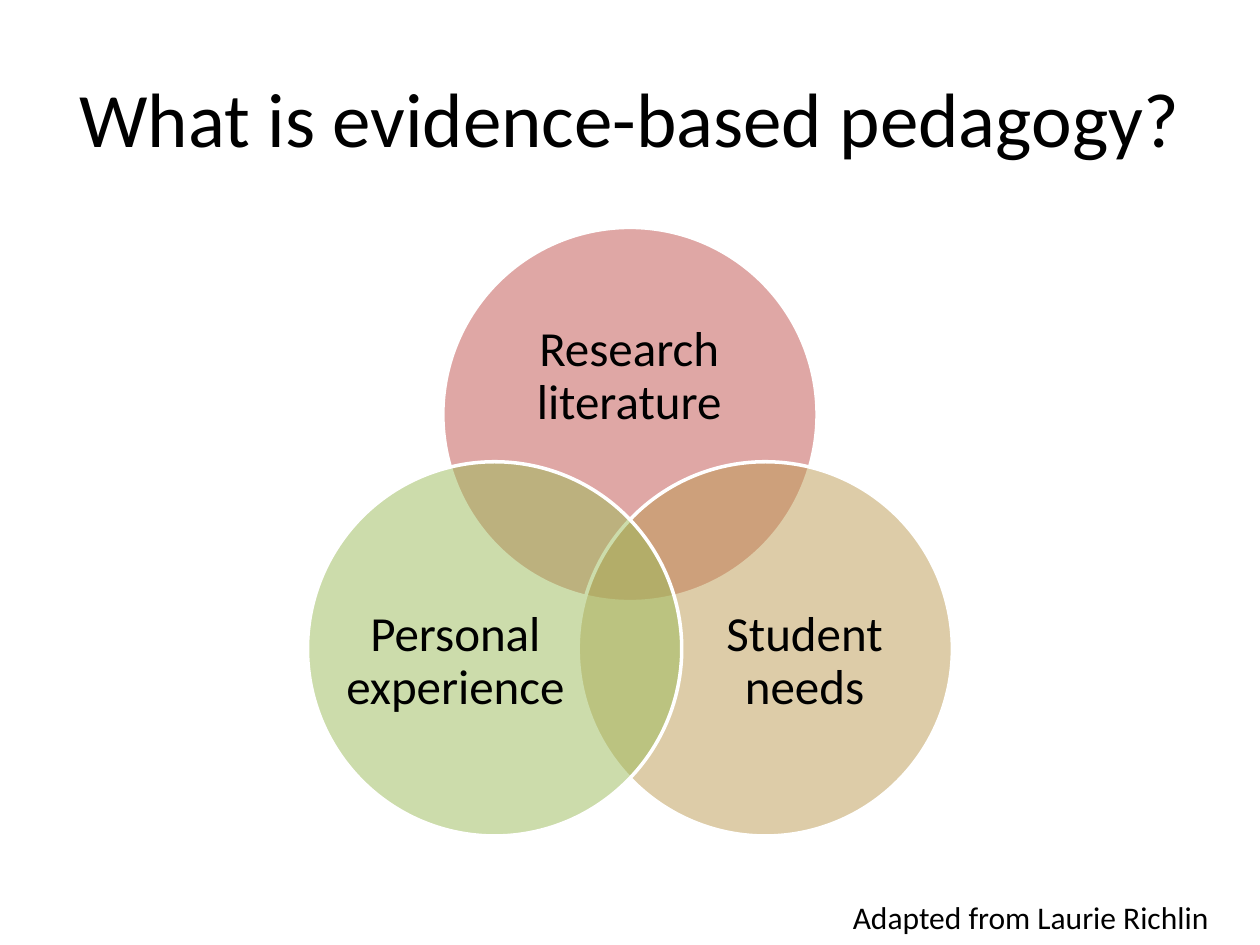
from math import cos, radians, sin

from lxml.etree import SubElement
from pptx import Presentation
from pptx.dml.color import RGBColor
from pptx.enum.shapes import MSO_SHAPE
from pptx.enum.text import MSO_ANCHOR, PP_ALIGN
from pptx.oxml.ns import qn
from pptx.util import Inches, Pt

BLACK = RGBColor(0x00, 0x00, 0x00)
WHITE = RGBColor(0xFF, 0xFF, 0xFF)
RED = RGBColor(0xC0, 0x50, 0x4D)
TAN = RGBColor(0xBD, 0x9B, 0x53)
GREEN = RGBColor(0x9B, 0xBB, 0x59)

TITLE = "What is evidence-based pedagogy?"
CREDIT = "Adapted from Laurie Richlin"

# Label, colour, angle round the centre, label box as shares of the circle
CIRCLES = [
    ("Research literature", RED, -90, (0.13, 0.175, 0.735, 0.45)),
    ("Student needs", TAN, 30, (0.305, 0.26, 0.6, 0.55)),
    ("Personal experience", GREEN, 150, (0.095, 0.26, 0.6, 0.55)),
]
SLIDE_W, SLIDE_H = 10, 7.5
CENTER_X, CENTER_Y = SLIDE_W / 2, 4.53
DIAMETER = 2.97
ORBIT = 1.24  # from the diagram's centre to each circle's centre


def add_text(shapes, box, text, size, align=PP_ALIGN.CENTER,
             anchor=MSO_ANCHOR.MIDDLE, inset=None, spacing=None):
    tf = shapes.add_textbox(*map(Inches, box)).text_frame
    tf.word_wrap = True
    tf.vertical_anchor = anchor
    if inset is not None:
        tf.margin_left = tf.margin_right = Inches(inset)
        tf.margin_top = tf.margin_bottom = Inches(inset)
    p = tf.paragraphs[0]
    p.alignment = align
    p.line_spacing = spacing
    r = p.add_run()
    r.text = text
    r.font.name = "Calibri"
    r.font.size = Pt(size)
    r.font.color.rgb = BLACK


def add_circle(shapes, left, top, color):
    sp = shapes.add_shape(MSO_SHAPE.OVAL, *map(Inches, (left, top, DIAMETER, DIAMETER)))
    sp.shadow.inherit = False
    sp.fill.solid()
    sp.fill.fore_color.rgb = color
    sp.line.color.rgb = WHITE
    sp.line.width = Pt(2)
    # Half transparent, so that overlaps show
    clr = sp.fill._xPr.find(qn("a:solidFill"))[0]
    SubElement(clr, qn("a:alpha")).set("val", "50000")


prs = Presentation()
prs.slide_width, prs.slide_height = Inches(SLIDE_W), Inches(SLIDE_H)
s = prs.slides.add_slide(prs.slide_layouts[6])

# Title
add_text(s.shapes, (0.5, 0.3, 9, 1.25), TITLE, 44)

# Venn diagram
venn = s.shapes.add_group_shape()
for label, color, angle, (x, y, w, h) in CIRCLES:
    left = CENTER_X + ORBIT * cos(radians(angle)) - DIAMETER / 2
    top = CENTER_Y + ORBIT * sin(radians(angle)) - DIAMETER / 2
    add_circle(venn.shapes, left, top, color)
    box = (left + x * DIAMETER, top + y * DIAMETER, w * DIAMETER, h * DIAMETER)
    add_text(venn.shapes, box, label, 28, inset=0, spacing=0.9)

# Credit
add_text(s.shapes, (6.67, 7.08, 3.33, 0.4), CREDIT, 18,
         align=PP_ALIGN.LEFT, anchor=MSO_ANCHOR.TOP)

prs.save("out.pptx")
